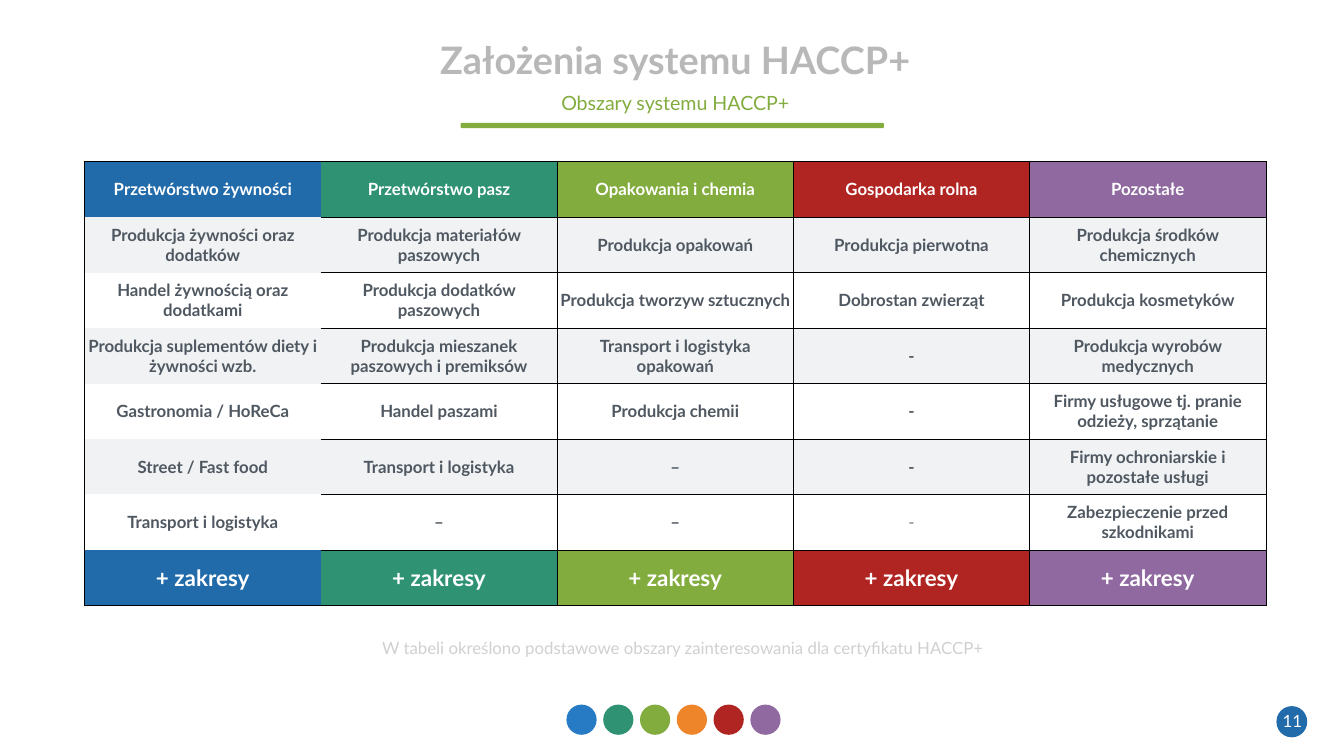
from lxml import etree
from pptx import Presentation
from pptx.dml.color import RGBColor as RGB
from pptx.enum.shapes import MSO_SHAPE as Preset
from pptx.enum.text import MSO_ANCHOR as Anchor, MSO_AUTO_SIZE as AutoSize, PP_ALIGN as Align
from pptx.oxml.ns import qn
from pptx.util import Inches, Pt

BLUE, TEAL, GREEN = RGB(0x22, 0x6B, 0xAB), RGB(0x2E, 0x92, 0x73), RGB(0x83, 0xAC, 0x3F)
RED, PURPLE, ORANGE = RGB(0xB0, 0x25, 0x21), RGB(0x90, 0x69, 0xA1), RGB(0xEE, 0x85, 0x2A)
LIGHT_BLUE = RGB(0x27, 0x7B, 0xC4)
WHITE, BAND, BLACK = RGB(0xFF, 0xFF, 0xFF), RGB(0xF0, 0xF2, 0xF4), RGB(0, 0, 0)
SLATE, GREY = RGB(0x4F, 0x58, 0x61), RGB(0x72, 0x7B, 0x85)
TITLE_GREY, NOTE_GREY = RGB(0xB8, 0xB8, 0xB8), RGB(0xD0, 0xD0, 0xD0)

AREA_COLORS = [BLUE, TEAL, GREEN, RED, PURPLE]
AREAS = [
    ["Przetwórstwo żywności", "Przetwórstwo pasz", "Opakowania i chemia",
     "Gospodarka rolna", "Pozostałe"],
    ["Produkcja żywności oraz dodatków", "Produkcja materiałów paszowych",
     "Produkcja opakowań", "Produkcja pierwotna", "Produkcja środków chemicznych"],
    ["Handel żywnością oraz dodatkami", "Produkcja dodatków paszowych",
     "Produkcja tworzyw sztucznych", "Dobrostan zwierząt", "Produkcja kosmetyków"],
    ["Produkcja suplementów diety i żywności wzb.",
     "Produkcja mieszanek paszowych i premiksów",
     "Transport i logistyka opakowań", "-", "Produkcja wyrobów medycznych"],
    ["Gastronomia / HoReCa", "Handel paszami", "Produkcja chemii", "-",
     "Firmy usługowe tj. pranie odzieży, sprzątanie"],
    ["Street / Fast food", "Transport i logistyka", "–", "-",
     "Firmy ochroniarskie i pozostałe usługi"],
    ["Transport i logistyka", "–", "–", "-", "Zabezpieczenie przed szkodnikami"],
    ["+ zakresy"] * 5,
]


class SlideBuilder:
    font = "Lato"
    rule_width = Pt(1)

    def __init__(self, slide):
        self.slide = slide

    def set_text(self, frame, text, size, color, bold=False):
        frame.text = text
        paragraph = frame.paragraphs[0]
        paragraph.alignment = Align.CENTER
        look = {"name": self.font, "size": Pt(size), "bold": bold}
        for key, value in look.items():
            setattr(paragraph.font, key, value)
        paragraph.font.color.rgb = color
        return paragraph

    def text(self, box, text, size, color, bold=False, inset=(0, 0),
             anchor=Anchor.MIDDLE, wrap=True, holder=None):
        left, top, width, height = map(Inches, box)
        if holder is None:
            holder = self.slide.shapes.add_textbox(left, top, width, height)
        side, end = map(Inches, inset)
        place = {"left": left, "top": top, "width": width, "height": height}
        layout = {"margin_left": side, "margin_right": side, "margin_top": end,
                  "margin_bottom": end, "vertical_anchor": anchor,
                  "word_wrap": wrap, "auto_size": AutoSize.NONE}
        for target, values in ((holder, place), (holder.text_frame, layout)):
            for key, value in values.items():
                setattr(target, key, value)
        return self.set_text(holder.text_frame, text, size, color, bold)

    def pill(self, box, color, rounding=0.5):
        shape = self.slide.shapes.add_shape(Preset.ROUNDED_RECTANGLE, *map(Inches, box))
        shape.adjustments[0] = rounding
        shape.shadow.inherit = False
        shape.fill.solid()
        shape.fill.fore_color.rgb = color
        shape.line.fill.background()

    def borders(self, cell, visible):
        """Set the left, right, top and bottom rules of a cell, in that order."""
        properties = cell._tc.get_or_add_tcPr()
        for index, (side, shown) in enumerate(zip("LRTB", visible)):
            line = etree.Element(qn(f"a:ln{side}"), w=str(self.rule_width))
            if shown:
                fill = etree.SubElement(line, qn("a:solidFill"))
                etree.SubElement(fill, qn("a:srgbClr"), val=str(BLACK))
            else:
                etree.SubElement(line, qn("a:noFill"))
            properties.insert(index, line)

    def table(self, box, rows):
        last_row, last_col = len(rows) - 1, len(rows[0]) - 1
        table = self.slide.shapes.add_table(
            len(rows), len(rows[0]), *map(Inches, box)).table
        table.first_row = table.horz_banding = False
        margins = dict.fromkeys(
            ("margin_left", "margin_right", "margin_top", "margin_bottom"), Inches(0.06))
        for r, row in enumerate(rows):
            for c, text in enumerate(row):
                cell = table.cell(r, c)
                for key, value in {**margins, "vertical_anchor": Anchor.MIDDLE}.items():
                    setattr(cell, key, value)
                colored = r in (0, last_row)
                muted = (r, c) == (last_row - 1, 3)
                color = WHITE if colored else GREY if muted else SLATE
                self.set_text(cell.text_frame, text, 32 if r == last_row else 24,
                              color, not muted)
                if colored or r % 2:
                    cell.fill.solid()
                    cell.fill.fore_color.rgb = AREA_COLORS[c] if colored else BAND
                else:
                    cell.fill.background()
                # The first column has outer rules only
                self.borders(cell, (c != 1, c > 0 or c == last_col,
                                    c > 0 or r == 0, c > 0 or r == last_row))


def main():
    deck = Presentation()
    deck.slide_width, deck.slide_height = Inches(26.67), Inches(15)
    slide = deck.slides.add_slide(deck.slide_layouts[5])
    builder = SlideBuilder(slide)

    # Page number
    builder.pill((25.33, 14.01, 0.61, 0.62), BLUE)
    builder.text((25.43, 13.99, 0.43, 0.64), "11", 24, WHITE, wrap=False)

    # Row of dots
    for i, color in enumerate([LIGHT_BLUE, TEAL, GREEN, ORANGE, RED, PURPLE]):
        builder.pill((11.24 + 0.73 * i, 13.98, 0.6, 0.6), color)

    # Headings
    builder.pill((9.14, 2.44, 8.4, 0.1), GREEN, 0.22)
    builder.text((1.68, 0.71, 23.44, 0.94), "Założenia systemu HACCP+", 54, TITLE_GREY,
                 bold=True, inset=(0, 0.11), holder=slide.shapes.title)
    builder.text((1.68, 1.78, 23.44, 0.5), "Obszary systemu HACCP+", 28, GREEN,
                 inset=(0, 0.11))

    # Areas and the note below them
    note = builder.text(
        (1.9, 12.33, 23.29, 1.15),
        "W tabeli określono podstawowe obszary zainteresowania dla certyfikatu HACCP+",
        24, NOTE_GREY, inset=(0.27, 0.13), anchor=Anchor.TOP)
    note.line_spacing = 1.5
    builder.table((1.68, 3.21, 23.44, 8.8), AREAS)

    deck.save("out.pptx")


if __name__ == "__main__":
    main()
